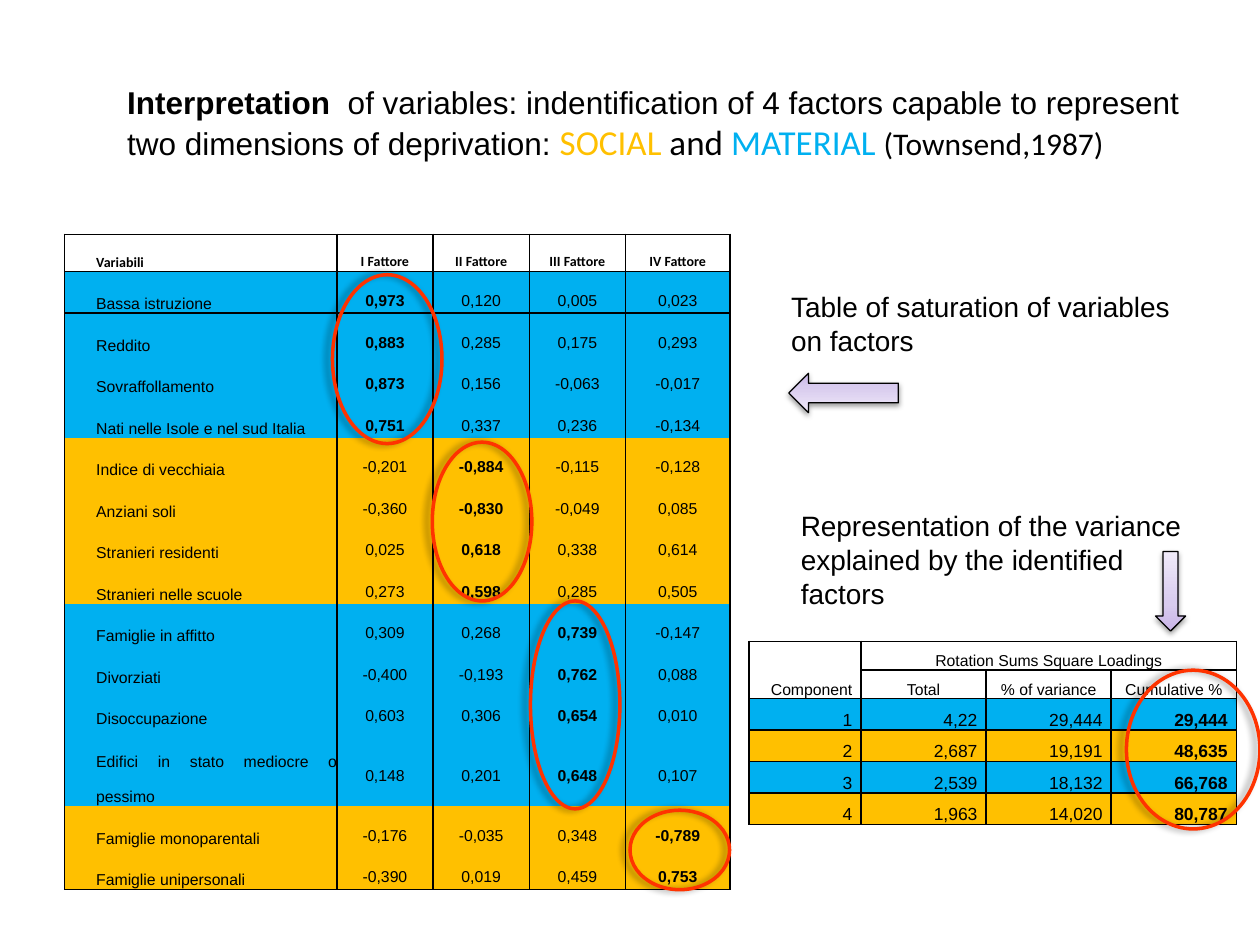
import pptx
import pptx.util
import pptx.dml.color
import pptx.enum.text
import pptx.enum.shapes
import pptx.oxml
import pptx.oxml.ns

Pt = pptx.util.Pt
RGBColor = pptx.dml.color.RGBColor
PP_ALIGN = pptx.enum.text.PP_ALIGN
MSO_ANCHOR = pptx.enum.text.MSO_ANCHOR
MSO_SHAPE = pptx.enum.shapes.MSO_SHAPE
BLACK = RGBColor(0x00, 0x00, 0x00)
BLUE = RGBColor(0x00, 0xB0, 0xF0)
GOLD = RGBColor(0xFF, 0xC0, 0x00)
RED = RGBColor(0xFF, 0x33, 0x00)
LILACS = [(0, RGBColor(0xC9, 0xB5, 0xE8)), (35, RGBColor(0xD8, 0xCB, 0xEE)), (100, RGBColor(0xF0, 0xEA, 0xF9))]
NS = pptx.oxml.ns.nsdecls("a")
NO_STYLE = "{2D5ABB26-0587-4C30-8999-92F81FD0307C}"


def format_cell(cell, text, size, align, spacing, fill, sides, bold=False, font="Arial", margin=0):
    cell.text = text
    cell.margin_left = cell.margin_right = Pt(margin)
    cell.margin_top = cell.margin_bottom = 0
    p = cell.text_frame.paragraphs[0]
    p.alignment = align
    p.line_spacing = spacing
    for r in p.runs:
        r.font.name, r.font.size, r.font.bold = font, Pt(size), bold
        r.font.color.rgb = BLACK
    if fill is None:
        cell.fill.background()
    else:
        cell.fill.solid()
        cell.fill.fore_color.rgb = fill
    tcPr = cell._tc.get_or_add_tcPr()
    for i, side in enumerate(sides):
        tcPr.insert(i, pptx.oxml.parse_xml(
            f'<a:ln{side} {NS} w="12700"><a:solidFill><a:srgbClr val="{BLACK}"/></a:solidFill></a:ln{side}>'))


def add_shadow(sp, alpha, blur, dist, angle):
    sp.shadow.inherit = False
    sp._element.spPr.find(pptx.oxml.ns.qn("a:effectLst")).append(pptx.oxml.parse_xml(
        f'<a:outerShdw {NS} blurRad="{Pt(blur)}" dist="{Pt(dist)}" dir="{angle * 60000}" rotWithShape="0">'
        f'<a:srgbClr val="{BLACK}"><a:alpha val="{alpha * 1000}"/></a:srgbClr></a:outerShdw>'))


prs = pptx.Presentation()
prs.slide_width, prs.slide_height = Pt(720), Pt(540)
s = prs.slides.add_slide(prs.slide_layouts[5])

title = s.shapes.title
title.left, title.top, title.width, title.height = Pt(65.5), Pt(21), Pt(618), Pt(75)
tf = title.text_frame
tf.word_wrap = True
tf.auto_size = pptx.enum.text.MSO_AUTO_SIZE.NONE
tf.vertical_anchor = MSO_ANCHOR.TOP
tf.margin_top = Pt(26.5)
p = tf.paragraphs[0]
p.alignment = PP_ALIGN.LEFT
for text, font, size, color, bold in [
    ("Interpretation  ", "Arial", 18, BLACK, True),
    ("of variables: indentification of 4 factors capable to represent two dimensions of deprivation: ",
     "Arial", 18, BLACK, False),
    ("SOCIAL", "Calibri", 20, GOLD, False),
    (" and ", "Calibri", 20, BLACK, False),
    ("MATERIAL ", "Calibri", 20, BLUE, False),
    ("(Townsend,1987)", "Calibri", 18, BLACK, False),
]:
    r = p.add_run()
    r.text = text
    r.font.name, r.font.size, r.font.bold = font, Pt(size), bold
    r.font.color.rgb = color

factors = [
    ("Variabili", "I Fattore", "II Fattore", "III Fattore", "IV Fattore"),
    ("Bassa istruzione", "0,973", "0,120", "0,005", "0,023"),
    ("Reddito", "0,883", "0,285", "0,175", "0,293"),
    ("Sovraffollamento", "0,873", "0,156", "-0,063", "-0,017"),
    ("Nati nelle Isole e nel sud Italia", "0,751", "0,337", "0,236", "-0,134"),
    ("Indice di vecchiaia", "-0,201", "-0,884", "-0,115", "-0,128"),
    ("Anziani soli", "-0,360", "-0,830", "-0,049", "0,085"),
    ("Stranieri residenti", "0,025", "0,618", "0,338", "0,614"),
    ("Stranieri nelle scuole", "0,273", "0,598", "0,285", "0,505"),
    ("Famiglie in affitto", "0,309", "0,268", "0,739", "-0,147"),
    ("Divorziati", "-0,400", "-0,193", "0,762", "0,088"),
    ("Disoccupazione", "0,603", "0,306", "0,654", "0,010"),
    ("Edifici in stato mediocre o pessimo", "0,148", "0,201", "0,648", "0,107"),
    ("Famiglie monoparentali", "-0,176", "-0,035", "0,348", "-0,789"),
    ("Famiglie unipersonali", "-0,390", "0,019", "0,459", "0,753"),
]
loadings = [
    ("Component", "Rotation Sums Square Loadings", "", ""),
    ("", "Total", "% of variance", "Cumulative %"),
    ("1", "4,22", "29,444", "29,444"),
    ("2", "2,687", "19,191", "48,635"),
    ("3", "2,539", "18,132", "66,768"),
    ("4", "1,963", "14,020", "80,787"),
]
tables = []
for data, left, top, widths, heights in [
    (factors, 37, 134, [155.5, 55, 55, 55, 59.7], [21.2] + [23.75] * 11 + [44.6] + [23.75] * 2),
    (loadings, 428, 366.5, [64, 71.5, 71.5, 71.5], [16.3] * 2 + [18] * 4),
]:
    frame = s.shapes.add_table(len(data), len(widths), Pt(left), Pt(top), Pt(sum(widths)), Pt(sum(heights)))
    table = frame.table
    table.first_row = table.horz_banding = False
    table._tbl.tblPr.find(pptx.oxml.ns.qn("a:tableStyleId")).text = NO_STYLE
    for col, width in zip(table.columns, widths):
        col.width = Pt(width)
    for row, height in zip(table.rows, heights):
        row.height = Pt(height)
    tables.append(table)
factor_table, loading_table = tables

for i, row in enumerate(factors):
    group = (i - 1) // 4
    header = i == 0
    fill = None if header else (BLUE, GOLD)[group % 2]
    sides = "LR" + ("T" if i < 2 else "") + ("B" if header or i == len(factors) - 1 else "")
    for j, text in enumerate(row):
        cell = factor_table.cell(i, j)
        format_cell(cell, text, 8 if header else 9, PP_ALIGN.CENTER if j else PP_ALIGN.JUSTIFY, 2, fill, sides,
                    header or j == group + 1, "Calibri" if header else "Arial")
        cell.vertical_anchor = MSO_ANCHOR.MIDDLE if j else MSO_ANCHOR.BOTTOM
        if j == 0:
            cell.text_frame.paragraphs[0]._p.get_or_add_pPr().set("marL", str(Pt(18)))

loading_table.cell(0, 0).merge(loading_table.cell(1, 0))
loading_table.cell(0, 1).merge(loading_table.cell(0, 3))
for i, row in enumerate(loadings):
    header = i < 2
    for j, text in enumerate(row):
        cell = loading_table.cell(i, j)
        format_cell(cell, text, 9 if header else 10, PP_ALIGN.CENTER if header and j else PP_ALIGN.RIGHT, 1.5,
                    None if header else (BLUE, GOLD)[i % 2], "LRTB", not header and j == 3, margin=5)
        cell.vertical_anchor = MSO_ANCHOR.BOTTOM

for text, left, top, height in [
    ("Table of saturation of variables on factors", 445, 162, 65.5),
    ("Representation of the variance explained by the identified factors", 450.5, 287.3, 85),
]:
    sp = s.shapes.add_textbox(Pt(left), Pt(top), Pt(238.3), Pt(height))
    tf = sp.text_frame
    tf.word_wrap = True
    tf.text = text
    font = tf.paragraphs[0].runs[0].font
    font.name, font.size = "Arial", Pt(16)
    font.color.rgb = BLACK

stops = "".join(f'<a:gs pos="{pos * 1000}"><a:srgbClr val="{color}"/></a:gs>' for pos, color in LILACS)
for kind, left, top, width, height, rotation in [
    (MSO_SHAPE.RIGHT_ARROW, 450.7, 213.3, 62.6, 22.5, 180),
    (MSO_SHAPE.DOWN_ARROW, 660.3, 315.2, 17.2, 45.4, 0),
]:
    sp = s.shapes.add_shape(kind, Pt(left), Pt(top), Pt(width), Pt(height))
    sp.rotation = rotation
    sp.line.color.rgb = BLACK
    sp.line.width = Pt(0.75)
    sp._element.spPr.insert(2, pptx.oxml.parse_xml(
        f'<a:gradFill {NS} rotWithShape="1"><a:gsLst>{stops}</a:gsLst><a:lin ang="16200000" scaled="0"/></a:gradFill>'))
    add_shadow(sp, 38, 3.1, 1.6, 90)

for left, top, width, height in [
    (190, 157, 62.6, 96.5),
    (247, 252.7, 56.9, 90.7),
    (303.1, 343.4, 51.1, 118.8),
    (360, 463, 56.9, 45.4),
    (643.7, 383, 76.3, 90.7),
]:
    sp = s.shapes.add_shape(MSO_SHAPE.OVAL, Pt(left), Pt(top), Pt(width), Pt(height))
    sp.fill.background()
    sp.line.color.rgb = RED
    sp.line.width = Pt(2)
    add_shadow(sp, 40, 4, 3, 180)

prs.save("out.pptx")
